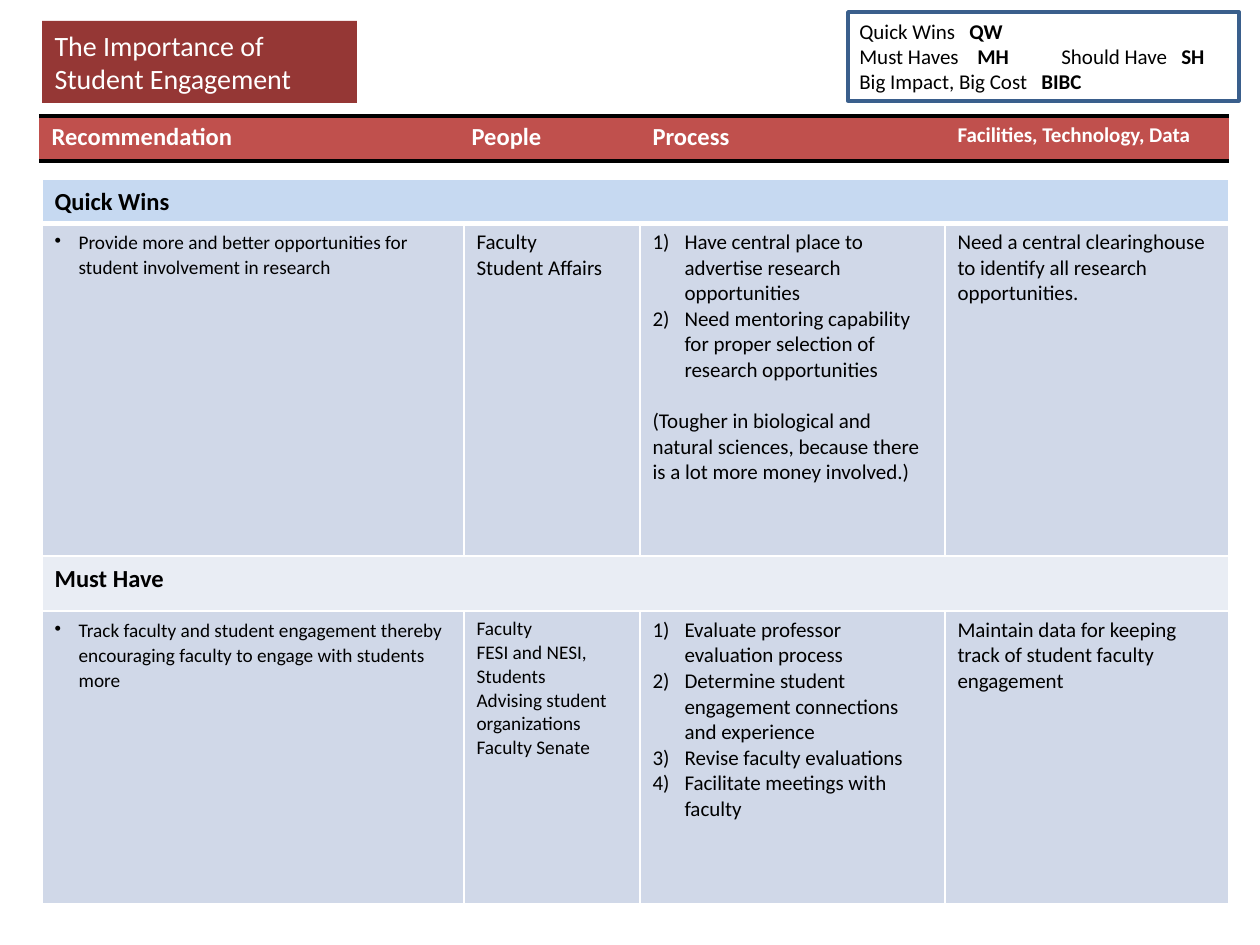
from lxml import etree
from pptx import Presentation
from pptx import util as u
from pptx.dml.color import RGBColor
from pptx.enum import shapes, text
from pptx.oxml.ns import qn

FONT = "Calibri"
BLACK, WHITE = "000000", "FFFFFF"
HEADER_RED, TITLE_RED = "C0504D", "953735"
BODY_BLUE, QUICK_BLUE, MUST_BLUE = "D0D8E8", "C6D9F1", "E9EDF4"
FRAME_BLUE = "3A5F8C"
BULLET = ("buChar", {"char": "•"}, 24)
NUMBER = ("buAutoNum", {"type": "arabicParenR"}, 32)


def px(length):
    """Turn a length at 126 px to the inch into EMU."""
    return u.Emu(round(length * 914400 / 126))


def color(code):
    return RGBColor.from_string(code)


def fill(item, code):
    item.fill.solid()
    item.fill.fore_color.rgb = color(code)


def write(frame, lines, size=12, ink=BLACK, bold=False, marker=None,
          spacing=None, gap_before=None, tabs=(), add=False):
    """Write paragraphs; a line is a string or a list of (string, bold) spans."""
    for index, line in enumerate(lines):
        para = frame.add_paragraph() if add or index else frame.paragraphs[0]
        para.alignment = text.PP_ALIGN.LEFT
        properties = para._p.get_or_add_pPr()
        if marker:
            tag, attributes, indent = marker
            properties.set("marL", str(px(indent)))
            properties.set("indent", str(-px(indent)))
            etree.SubElement(properties, qn("a:" + tag), attributes)
        if tabs:
            stops = etree.SubElement(properties, qn("a:tabLst"))
            for stop in tabs[index]:
                etree.SubElement(stops, qn("a:tab"), pos=str(px(stop)), algn="l")
        if spacing:
            para.line_spacing = spacing
        if gap_before:
            para.space_before = u.Pt(gap_before)
        for words, heavy in [(line, bold)] if isinstance(line, str) else line:
            span = para.add_run()
            span.text = words
            span.font.name, span.font.size, span.font.bold = FONT, u.Pt(size), heavy
            span.font.color.rgb = color(ink)


def set_borders(cell, **borders):
    """Set each side (L, R, T, B) to a (colour, points) pair, or None for no line."""
    properties = cell._tc.get_or_add_tcPr()
    for position, side in enumerate("LRTB"):
        border = borders.get(side)
        line = etree.Element(qn("a:ln" + side))
        if border:
            line.set("w", str(u.Pt(border[1])))
            solid = etree.SubElement(line, qn("a:solidFill"))
            etree.SubElement(solid, qn("a:srgbClr"), val=border[0])
        else:
            line.set("w", "0")
            etree.SubElement(line, qn("a:noFill"))
        properties.insert(position, line)


def add_grid(page, left, top, widths, heights):
    frame = page.shapes.add_table(len(heights), len(widths), px(left), px(top),
                                  px(sum(widths)), px(sum(heights)))
    table = frame.table
    table.first_row = table.horz_banding = False
    for column, width in zip(table.columns, widths):
        column.width = px(width)
    for row, height in zip(table.rows, heights):
        row.height = px(height)
    return table


def add_title(page, left, top, width, height):
    title = page.shapes.title
    title.left, title.top, title.width, title.height = map(px, (left, top, width, height))
    outline = etree.SubElement(title._element.spPr, qn("a:prstGeom"), prst="roundRect")
    etree.SubElement(outline, qn("a:avLst"))
    fill(title, TITLE_RED)
    frame = title.text_frame
    frame.word_wrap = True
    frame.auto_size = text.MSO_AUTO_SIZE.NONE
    frame.vertical_anchor = text.MSO_ANCHOR.MIDDLE
    write(frame, ["The Importance of Student Engagement"], size=16, ink=WHITE)


def add_legend(page, left, top, width, height):
    group = page.shapes.add_group_shape()
    box = group.shapes.add_textbox(px(left), px(top), px(width), px(height))
    box.text_frame.word_wrap = True
    write(box.text_frame, [
        [("Quick Wins\t", False), ("QW", True)],
        [("Must Haves\t", False), ("MH", True), ("\tShould Have\t", False), ("SH", True)],
        [("Big Impact, Big Cost\t", False), ("BIBC", True)],
    ], tabs=[(110,), (118, 202, 322), (182,)])
    frame = group.shapes.add_shape(shapes.MSO_SHAPE.RECTANGLE, px(left + 1), px(top),
                                   px(width + 13), px(height))
    frame.shadow.inherit = False
    frame.fill.background()
    frame.line.color.rgb = color(FRAME_BLUE)
    frame.line.width = u.Pt(2)


def add_header(page, left, top, height):
    table = add_grid(page, left, top, [420, 181, 305, 284], [height])
    labels = [("Recommendation", 14), ("People", 14), ("Process", 14),
              ("Facilities, Technology, Data", 12)]
    for cell, (label, size) in zip(table.rows[0].cells, labels):
        fill(cell, HEADER_RED)
        set_borders(cell, T=(BLACK, 2), B=(BLACK, 2))
        write(cell.text_frame, [label], size=size, ink=WHITE, bold=True)


def fill_section(table, row, name, shade, rule, recommendation, people,
                 people_size, steps, facilities, remark=None):
    """Fill a heading row and the row of details below it."""
    thin = (WHITE, 1)
    heading = table.cell(row, 0)
    heading.merge(table.cell(row, 3))
    for cell in table.rows[row].cells:
        fill(cell, shade)
        set_borders(cell, L=thin, R=thin, T=thin, B=(WHITE, rule))
    write(heading.text_frame, [name], size=14, bold=True, spacing=1.06)

    details = list(table.rows[row + 1].cells)
    for cell in details:
        fill(cell, BODY_BLUE)
        set_borders(cell, L=thin, R=thin, T=(WHITE, rule), B=thin)
    frames = [cell.text_frame for cell in details]
    write(frames[0], [recommendation], size=11, marker=BULLET, spacing=1.06)
    write(frames[1], people, size=people_size)
    write(frames[2], steps, marker=NUMBER)
    if remark:
        write(frames[2], [remark], gap_before=14.6, add=True)
    write(frames[3], [facilities])


def add_recommendations(page, left, top):
    table = add_grid(page, left, top, [422, 176, 305, 284], [43, 333, 55, 293])
    fill_section(
        table, 0, "Quick Wins", QUICK_BLUE, 3,
        "Provide more and better opportunities for student involvement in research",
        ["Faculty", "Student Affairs"], 12,
        ["Have central place to advertise research opportunities",
         "Need mentoring capability for proper selection of research opportunities"],
        "Need a central clearinghouse to identify all research opportunities.",
        remark="(Tougher in biological and natural sciences, because there is "
               "a lot more money involved.)")
    fill_section(
        table, 2, "Must Have", MUST_BLUE, 1,
        "Track faculty and student engagement thereby encouraging faculty "
        "to engage with students more",
        ["Faculty", "FESI and NESI,", "Students", "Advising student organizations",
         "Faculty Senate"], 11,
        ["Evaluate professor evaluation process",
         "Determine student engagement connections and experience",
         "Revise faculty evaluations", "Facilitate meetings with faculty"],
        "Maintain data for keeping track of student faculty engagement")


def main():
    deck = Presentation()
    deck.slide_width, deck.slide_height = px(1260), px(945)
    page = deck.slides.add_slide(deck.slide_layouts[5])
    add_recommendations(page, 42, 179)
    add_header(page, 39, 116, 45)
    add_title(page, 42, 21, 315, 82)
    add_legend(page, 847, 12, 378, 89)
    deck.save("out.pptx")


if __name__ == "__main__":
    main()
